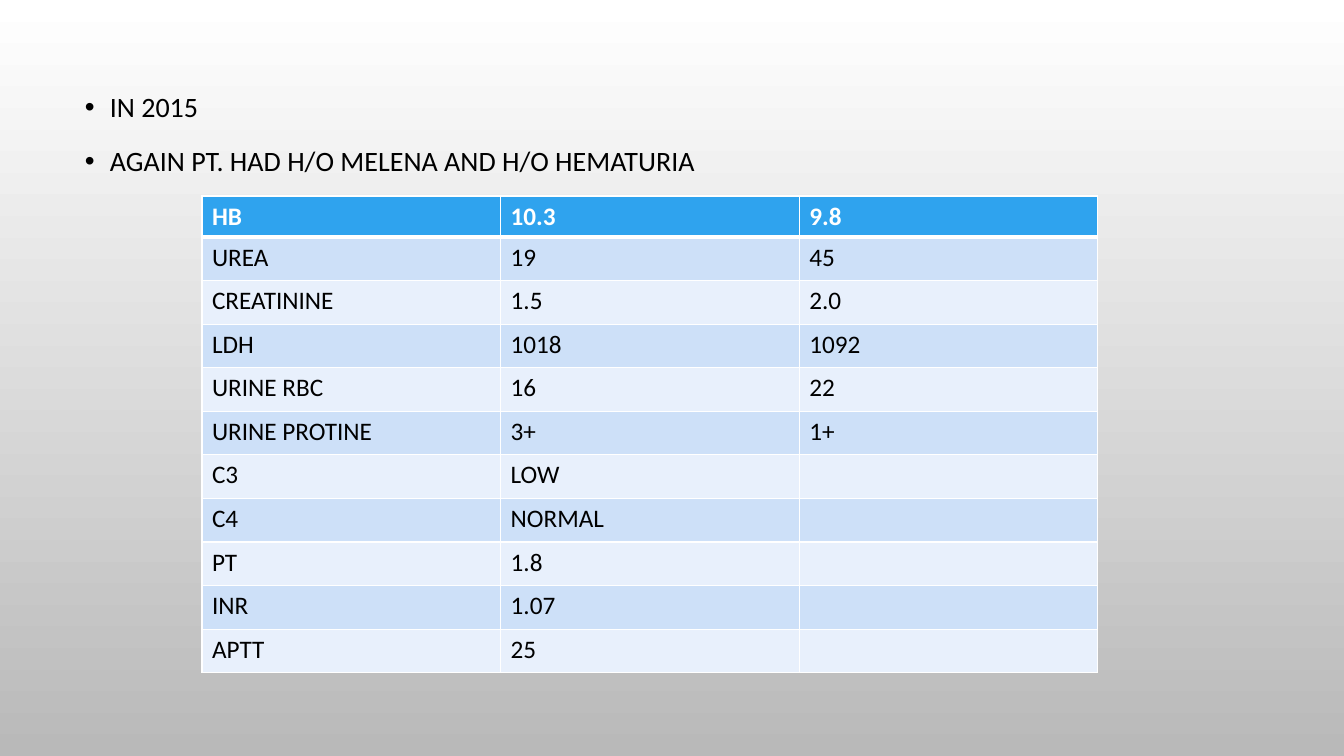
from lxml.etree import SubElement
from pptx import Presentation
from pptx.dml.color import RGBColor
from pptx.oxml.ns import qn
from pptx.util import Emu, Pt

# Content
HISTORY = ["IN 2015", "AGAIN PT. HAD H/O MELENA AND H/O HEMATURIA"]
LAB_RESULTS = [
    ("HB", "10.3", "9.8"),
    ("UREA", "19", "45"),
    ("CREATININE", "1.5", "2.0"),
    ("LDH", "1018", "1092"),
    ("URINE RBC", "16", "22"),
    ("URINE PROTINE", "3+", "1+"),
    ("C3", "LOW", ""),
    ("C4", "NORMAL", ""),
    ("PT", "1.8", ""),
    ("INR", "1.07", ""),
    ("APTT", "25", ""),
]

# Format
FONT = "Calibri"
BLACK = RGBColor(0x00, 0x00, 0x00)
WHITE = RGBColor(0xFF, 0xFF, 0xFF)
GRAY = RGBColor(0xB9, 0xB9, 0xB9)
HEADER_BLUE = RGBColor(0x2F, 0xA3, 0xEE)
BANDS = [RGBColor(0xE8, 0xF0, 0xFC), RGBColor(0xCD, 0xE0, 0xF8)]

# Lengths in px
PAGE = (1344, 756)
HISTORY_BOX = (75, 78, 1142, 377)
BULLET_INDENT = 25
TABLE_BOX = (202, 196, 896, 477)
HEADER_HEIGHT = 41


def px(length):
    return Emu(round(length * 914400 / 100.8))


def write(para, text, size, color=BLACK, bold=False):
    para.text = text
    font = para.font
    font.name, font.size, font.bold = FONT, Pt(size), bold
    font.color.rgb = color


def add_bullet(para):
    properties = para._p.get_or_add_pPr()
    properties.set("marL", str(px(BULLET_INDENT)))
    properties.set("indent", str(-px(BULLET_INDENT)))
    SubElement(properties, qn("a:buFont"), typeface="Arial")
    SubElement(properties, qn("a:buChar"), char="•")


def add_borders(cell, **widths):
    properties = cell._tc.get_or_add_tcPr()
    for side, width in widths.items():
        line = SubElement(properties, qn(f"a:ln{side}"), w=str(Pt(width)))
        fill = SubElement(line, qn("a:solidFill"))
        SubElement(fill, qn("a:srgbClr"), val=str(WHITE))


def add_history(page):
    frame = page.shapes.add_textbox(*map(px, HISTORY_BOX)).text_frame
    frame.word_wrap = True
    for index, text in enumerate(HISTORY):
        para = frame.add_paragraph() if index else frame.paragraphs[0]
        add_bullet(para)
        para.line_spacing = 1.2
        para.space_before = Pt(10 if index else 0)
        write(para, text, 20)


def add_lab_table(page):
    row_count, column_count = len(LAB_RESULTS), len(LAB_RESULTS[0])
    width, height = TABLE_BOX[2:]
    table = page.shapes.add_table(row_count, column_count, *map(px, TABLE_BOX)).table
    for column in table.columns:
        column.width = px(width / column_count)
    for index, values in enumerate(LAB_RESULTS):
        header = index == 0
        body_height = (height - HEADER_HEIGHT) / (row_count - 1)
        table.rows[index].height = px(HEADER_HEIGHT if header else body_height)
        for cell, value in zip(table.rows[index].cells, values):
            add_borders(cell, L=1, R=1, T=3 if index == 1 else 1, B=3 if header else 1)
            cell.fill.solid()
            cell.fill.fore_color.rgb = HEADER_BLUE if header else BANDS[index % 2]
            write(cell.text_frame.paragraphs[0], value, 18,
                  color=WHITE if header else BLACK, bold=header)


def main():
    deck = Presentation()
    deck.slide_width, deck.slide_height = map(px, PAGE)
    page = deck.slides.add_slide(deck.slide_layouts[6])

    # Background, white at the top to gray at the bottom
    backdrop = page.background.fill
    backdrop.gradient()
    backdrop.gradient_angle = 270
    for stop, color in zip(backdrop.gradient_stops, (WHITE, GRAY)):
        stop.color.rgb = color

    # History bullets, then lab results
    add_history(page)
    add_lab_table(page)
    deck.save("out.pptx")


if __name__ == "__main__":
    main()
